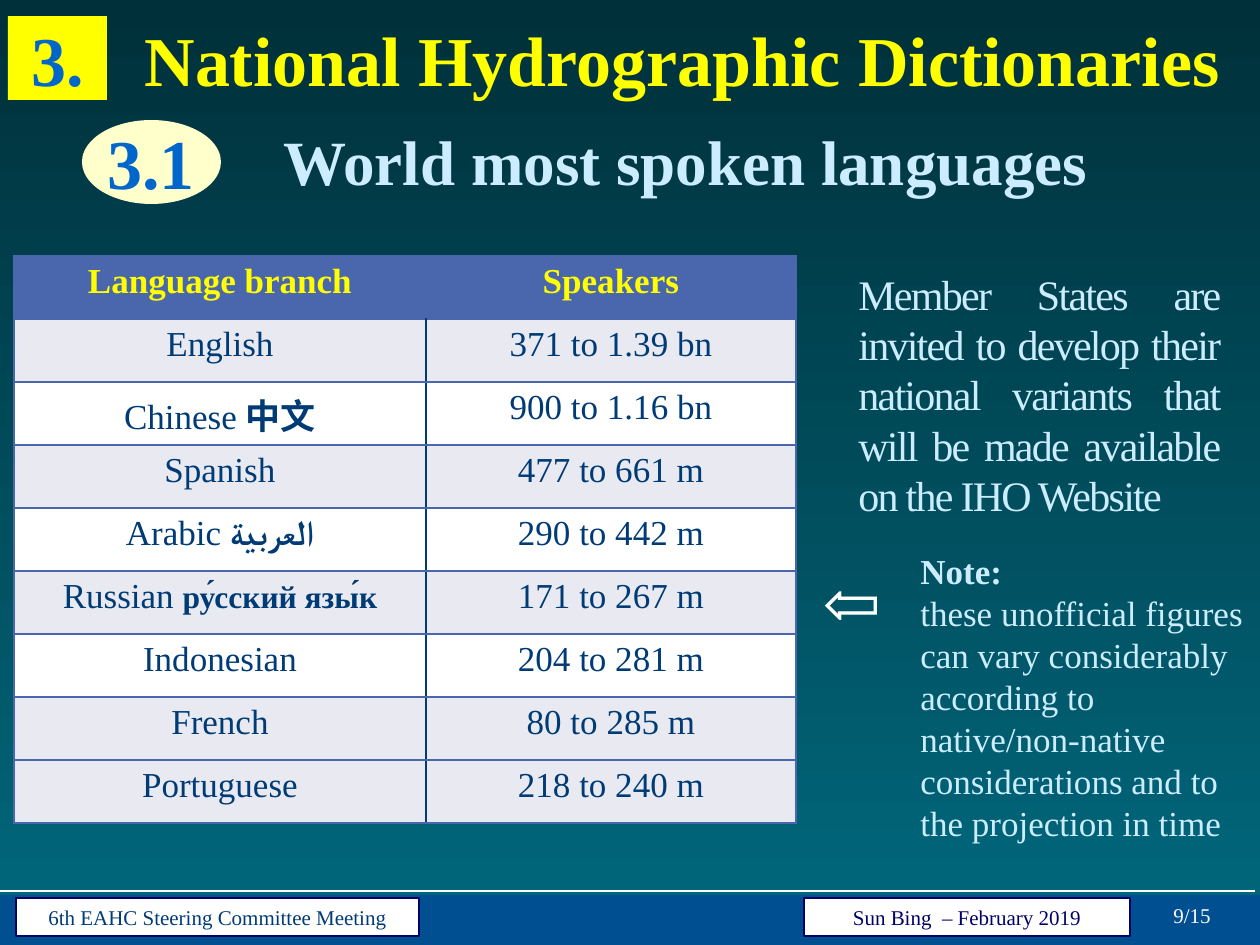
"""Build the slide on national hydrographic dictionaries."""
import pptx
import pptx.util
import pptx.dml.color
import pptx.enum.shapes
import pptx.enum.text
import pptx.oxml
import pptx.oxml.ns

SCALE = 914400 / 126
FONT = "Times New Roman"
INK = {
    "dark": "00303A", "teal": "01687D", "white": "FFFFFF", "bar": "005091",
    "navy": "003B76", "edge": "000066", "pale": "CCECFF", "cream": "FFFFCC",
    "blue": "0066CC", "yellow": "FFFF00", "head": "4A66AC", "band": "E9EAF1",
}
ALIGN = pptx.enum.text.PP_ALIGN
ANCHOR = pptx.enum.text.MSO_ANCHOR
SHAPE = pptx.enum.shapes.MSO_SHAPE
ROWS = [
    ("English", "", "371 to 1.39 bn", "band"),
    ("Chinese ", "中文", "900 to 1.16 bn", "white"),
    ("Spanish", "", "477 to 661 m", "band"),
    ("Arabic ", "العربية", "290 to 442 m", "white"),
    ("Russian ", "ру́сский язы́к", "171 to 267 m", "band"),
    ("Indonesian", "", "204 to 281 m", "white"),
    ("French", "", "80 to 285 m", "band"),
    ("Portuguese", "", "218 to 240 m", "band"),
]


def px(num):
    """Turn pixels into EMU."""
    return pptx.util.Emu(round(num * SCALE))


def tint(name):
    """Look up a colour."""
    return pptx.dml.color.RGBColor.from_string(INK[name])


class Deck:
    """Hold the style and the current slide."""

    def __init__(self):
        """Start a deck with one title-only slide."""
        self.prs = pptx.Presentation()
        self.prs.slide_width = px(1260)
        self.prs.slide_height = px(945)
        self.slide = self.prs.slides.add_slide(self.prs.slide_layouts[5])
        self.items = self.slide.shapes

    def ground(self, top, low):
        """Fill the background from top to bottom."""
        fill = self.slide.background.fill
        fill.gradient()
        fill.gradient_angle = 270
        for stop, name in zip(fill.gradient_stops, (top, low)):
            stop.color.rgb = tint(name)

    def style(self, run, size, ink, bold=False):
        """Format one run."""
        run.font.name = FONT
        run.font.size = pptx.util.Pt(size)
        run.font.bold = bold
        run.font.color.rgb = tint(ink)

    def label(self, item, text, size, ink, bold=False, align=ALIGN.CENTER,
              anchor=ANCHOR.TOP, tight=False):
        """Put text into a shape."""
        frame = item.text_frame
        frame.text = text
        frame.word_wrap = True
        frame.vertical_anchor = anchor
        if tight:
            frame.margin_left = frame.margin_right = 0
            frame.margin_top = frame.margin_bottom = 0
        for para in frame.paragraphs:
            para.alignment = align
            for run in para.runs:
                self.style(run, size, ink, bold)

    def title(self, box, text, size, ink):
        """Place and format the title."""
        item = self.items.title
        item.left, item.top, item.width, item.height = map(px, box)
        self.label(item, text, size, ink, True, anchor=ANCHOR.MIDDLE, tight=True)
        item.text_frame.auto_size = pptx.enum.text.MSO_AUTO_SIZE.NONE

    def text(self, box, text, size, ink, **look):
        """Add a text box."""
        item = self.items.add_textbox(*map(px, box))
        self.label(item, text, size, ink, **look)
        return item

    def shape(self, kind, box, fill, line=None):
        """Add a filled shape."""
        item = self.items.add_shape(kind, *map(px, box))
        item.shadow.inherit = False
        item.fill.solid()
        item.fill.fore_color.rgb = tint(fill)
        if line:
            item.line.color.rgb = tint(line)
            item.line.width = pptx.util.Pt(0.75)
        else:
            item.line.fill.background()
        return item

    def rule(self, left, right, top, ink, width):
        """Add a level line."""
        kind = pptx.enum.shapes.MSO_CONNECTOR.STRAIGHT
        item = self.items.add_connector(kind, px(left), px(top), px(right), px(top))
        item.line.color.rgb = tint(ink)
        item.line.width = pptx.util.Pt(width)
        props = item._element.spPr
        props.append(props.makeelement(pptx.oxml.ns.qn("a:effectLst"), {}))

    def cell(self, cell, text, fill, ink, bold, sides):
        """Fill, label and border one cell."""
        self.label(cell, text, 20, ink, bold)
        props = cell._tc.get_or_add_tcPr()
        for side, name in zip("LRTB", sides):
            props.append(pptx.oxml.parse_xml(
                f'<a:ln{side} {pptx.oxml.ns.nsdecls("a")} w="12700"><a:solidFill>'
                f'<a:srgbClr val="{INK[name]}"/></a:solidFill></a:ln{side}>'))
        cell.fill.solid()
        cell.fill.fore_color.rgb = tint(fill)

    def table(self, left, top, cols, high, heads, rows):
        """Add the table of languages."""
        total = len(rows) + 1
        box = (left, top, sum(cols), high * total)
        grid = self.items.add_table(total, len(cols), *map(px, box)).table
        for col, wide in zip(grid.columns, cols):
            col.width = px(wide)
        for row in grid.rows:
            row.height = px(high)
        for num, head in enumerate(heads):
            self.cell(grid.cell(0, num), head, "head", "yellow", True, ["head"] * 4)
        for num, (name, own, count, fill) in enumerate(rows, 1):
            first, last = grid.cell(num, 0), grid.cell(num, 1)
            self.cell(first, name, fill, "navy", False,
                      ("head", "navy", "head", "head"))
            self.cell(last, count, fill, "navy", False,
                      ("navy", "head", "head", "head"))
            if own:
                run = first.text_frame.paragraphs[0].add_run()
                run.text = own
                self.style(run, 18 if name == "Russian " else 20, "navy", True)


def main():
    """Build and save the slide."""
    deck = Deck()
    deck.ground("dark", "teal")
    deck.title((134, 29, 1096, 58), "National Hydrographic Dictionaries", 40, "yellow")
    deck.rule(0, 1255, 891, "white", 1.5)
    deck.shape(SHAPE.RECTANGLE, (0, 895, 1260, 50), "bar")
    deck.text((1138, 896, 108, 38), "9/15", 12, "white")
    for left, wide, words, ink in (
            (16, 403, "6th EAHC Steering Committee Meeting", "navy"),
            (804, 326, "Sun Bing  – February 2019", "edge")):
        item = deck.shape(SHAPE.RECTANGLE, (left, 898, wide, 38), "white", "edge")
        deck.label(item, words, 12, ink)

    deck.text((284, 123, 922, 77), "World most spoken languages", 36, "pale",
              bold=True, align=ALIGN.LEFT, tight=True)
    deck.shape(SHAPE.OVAL, (82, 120, 139, 84), "cream")
    deck.text((98, 120, 106, 84), "3.1", 40, "blue", bold=True, tight=True)
    badge = deck.shape(SHAPE.RECTANGLE, (8, 16, 99, 84), "yellow")
    deck.label(badge, "3.", 40, "blue", bold=True, tight=True)

    deck.table(14, 256, (412, 370), 63, ("Language branch", "Speakers"), ROWS)

    note = deck.text(
        (908, 543, 352, 310),
        "Note:\nthese unofficial figures can vary considerably according to "
        "native/non-native considerations and to the projection in time",
        20, "pale", align=ALIGN.LEFT)
    note.text_frame.paragraphs[0].runs[0].font.bold = True
    call = deck.text(
        (846, 262, 386, 267),
        "Member States are invited to develop their national variants that "
        "will be made available on the IHO Website",
        24, "pale", align=ALIGN.JUSTIFY)
    call.text_frame.paragraphs[0].runs[0].font._element.set("spc", "-100")
    arrow = deck.text((798, 563, 96, 97), "⇨", 40, "white", align=ALIGN.LEFT)
    arrow.rotation = 180
    deck.prs.save("out.pptx")


if __name__ == "__main__":
    main()
